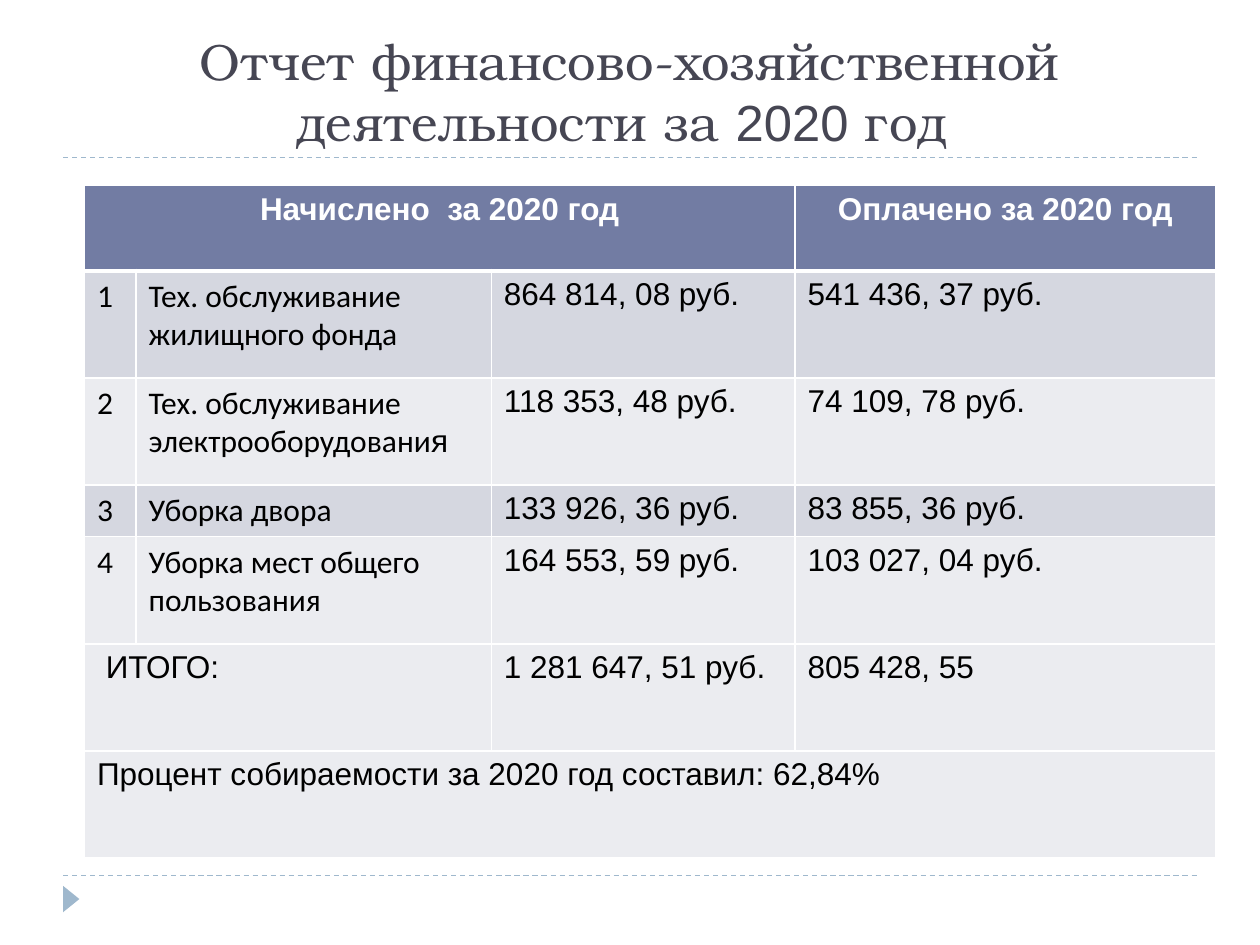
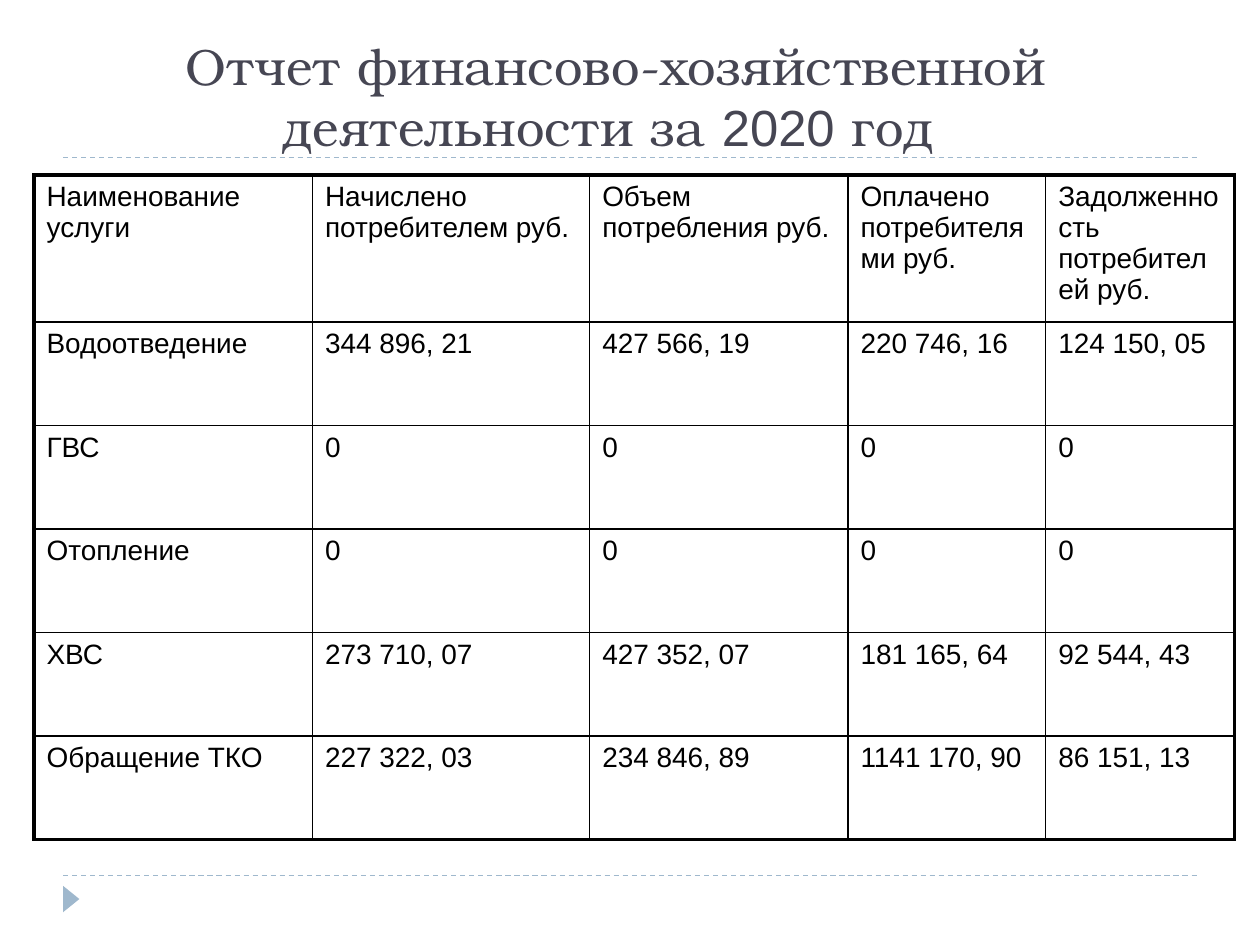
from collections import namedtuple
from dataclasses import dataclass

from lxml import etree
from pptx import Presentation
from pptx.dml.color import RGBColor
from pptx.enum.dml import MSO_LINE
from pptx.enum.shapes import MSO_CONNECTOR, MSO_SHAPE
from pptx.enum.text import MSO_ANCHOR, PP_ALIGN
from pptx.oxml.ns import qn
from pptx.util import Inches, Pt

STRAIGHT = MSO_CONNECTOR.STRAIGHT
TRIANGLE = MSO_SHAPE.ISOSCELES_TRIANGLE
DASH = MSO_LINE.DASH
BOTTOM = MSO_ANCHOR.BOTTOM
CENTER = PP_ALIGN.CENTER
LEFT = PP_ALIGN.LEFT

SLIDE_WIDTH = Inches(10)
SLIDE_HEIGHT = Inches(7.5)

Box = namedtuple("Box", "left top width height")
Style = namedtuple("Style", "font size color bold align before", defaults=(False, LEFT, 0))


@dataclass(frozen=True)
class Theme:
    accent: str = "9FB8CD"
    title: str = "464653"
    header: str = "727CA3"
    band_dark: str = "D5D7E0"
    band_light: str = "EBECF0"
    white: str = "FFFFFF"
    black: str = "000000"
    serif: str = "TeX Gyre Bonum"
    sans: str = "Arial"
    label: str = "Calibri"
    title_size: float = 29
    report_size: float = 18
    services_size: float = 16
    rule_width: float = 0.75
    thin: float = 1
    outer: float = 2.25
    header_rule: float = 3


THEME = Theme()

TITLE_RUNS = [
    ("Отчет финансово-хозяйственной деятельности за ", THEME.serif),
    ("2020", THEME.sans),
    (" год ", THEME.serif),
]

CHARGES = [
    ["Тех. обслуживание жилищного фонда", "864 814, 08 руб.", "541 436, 37 руб."],
    [[("Тех. обслуживание электрооборудовани", THEME.label), ("я", THEME.sans)],
     "118 353, 48 руб.", "74 109, 78 руб."],
    ["Уборка двора", "133 926, 36 руб.", "83 855, 36 руб."],
    ["Уборка мест общего пользования", "164 553, 59 руб.", "103 027, 04 руб."],
]

SERVICES = [
    ["Наименование услуги", "Начислено потребителем руб.", "Объем потребления руб.",
     "Оплачено потребителями руб.", "Задолженность потребителей руб."],
    ["Водоотведение", "344 896, 21", "427 566, 19", "220 746, 16", "124 150, 05"],
    ["ГВС", "0", "0", "0", "0"],
    ["Отопление", "0", "0", "0", "0"],
    ["ХВС", "273 710, 07", "427 352, 07", "181 165, 64", "92 544, 43"],
    ["Обращение ТКО", "227 322, 03", "234 846, 89", "1141 170, 90", "86 151, 13"],
]


def percent_box(left, top, width, height):
    return Box(int(SLIDE_WIDTH * left / 100), int(SLIDE_HEIGHT * top / 100),
               int(SLIDE_WIDTH * width / 100), int(SLIDE_HEIGHT * height / 100))


def color(value):
    return RGBColor.from_string(value)


def write(paragraph, content, style):
    runs = [(content, style.font)] if isinstance(content, str) else content
    paragraph.alignment = style.align
    paragraph.space_before = Pt(style.before)
    for text, font in runs:
        run = paragraph.add_run()
        run.text = text
        run.font.name = font
        run.font.size = Pt(style.size)
        run.font.bold = style.bold
        run.font.color.rgb = color(style.color)


def draw_rule(slide, box):
    rule = slide.shapes.add_connector(STRAIGHT, box.left, box.top,
                                      box.left + box.width, box.top)
    rule.line.color.rgb = color(THEME.accent)
    rule.line.width = Pt(THEME.rule_width)
    rule.line.dash_style = DASH
    etree.SubElement(rule._element.spPr, qn("a:effectLst"))


def draw_frame(slide):
    for top in (92.67, 16.67):
        draw_rule(slide, percent_box(5, top, 90, 0))
    marker = slide.shapes.add_shape(TRIANGLE, *percent_box(4.6, 94.27, 2.1, 1.73))
    marker.rotation = 90
    marker.shadow.inherit = False
    marker.fill.solid()
    marker.fill.fore_color.rgb = color(THEME.accent)
    marker.line.fill.background()


def draw_title(slide, box):
    frame = slide.shapes.add_textbox(*box).text_frame
    frame.word_wrap = True
    frame.vertical_anchor = BOTTOM
    write(frame.paragraphs[0], TITLE_RUNS,
          Style(THEME.serif, THEME.title_size, THEME.title, align=CENTER))


def draw_grid(slide, box, columns, rows):
    table = slide.shapes.add_table(len(rows), len(columns), *box).table
    for column, share in zip(table.columns, columns):
        column.width = int(box.width * share / sum(columns))
    for row, share in zip(table.rows, rows):
        row.height = int(box.height * share / sum(rows))
    return table


def set_borders(cell, line_color, left, right, top, bottom):
    properties = cell._tc.get_or_add_tcPr()
    for side, width in zip("LRTB", (left, right, top, bottom)):
        line = etree.SubElement(properties, qn(f"a:ln{side}"), w=str(Pt(width)))
        fill = etree.SubElement(line, qn("a:solidFill"))
        etree.SubElement(fill, qn("a:srgbClr"), val=line_color)


def draw_charges(slide, box):
    table = draw_grid(slide, box, (0.41, 2.82, 2.41, 3.34),
                      (0.68, 0.85, 0.85, 0.41, 0.85, 0.85, 0.85))
    total_row = len(CHARGES) + 1
    fills = [THEME.header] + [THEME.band_dark, THEME.band_light] * 2 + [THEME.band_light] * 2
    for row, fill in enumerate(fills):
        top = THEME.header_rule if row == 1 else THEME.thin
        bottom = THEME.header_rule if row == 0 else THEME.thin
        for cell in table.rows[row].cells:
            set_borders(cell, THEME.white, THEME.thin, THEME.thin, top, bottom)
            cell.fill.solid()
            cell.fill.fore_color.rgb = color(fill)

    for row, first, last in ((0, 0, 2), (total_row, 0, 1), (total_row + 1, 0, 3)):
        table.cell(row, first).merge(table.cell(row, last))

    heading = Style(THEME.sans, THEME.report_size, THEME.white, True, CENTER)
    amount = Style(THEME.sans, THEME.report_size, THEME.black)
    label = amount._replace(font=THEME.label)
    entries = [
        (0, 0, "Начислено  за 2020 год", heading),
        (0, 3, "Оплачено за 2020 год", heading),
        (total_row, 0, " ИТОГО:", amount),
        (total_row, 2, "1 281 647, 51 руб.", amount),
        (total_row, 3, "805 428, 55", amount),
        (total_row + 1, 0, "Процент собираемости за 2020 год составил: 62,84%", amount),
    ]
    for number, charge in enumerate(CHARGES, 1):
        for column, content in enumerate([str(number)] + charge):
            entries.append((number, column, content, label if column < 2 else amount))
    for row, column, content, style in entries:
        write(table.cell(row, column).text_frame.paragraphs[0], content, style)


def draw_services(slide, box):
    table = draw_grid(slide, box, (2.21, 2.2, 2.05, 1.57, 1.5),
                      [1.09] + [0.82] * (len(SERVICES) - 1))
    style = Style(THEME.sans, THEME.services_size, THEME.black, before=6)
    last_row, last_column = len(SERVICES) - 1, len(SERVICES[0]) - 1
    for row, service in enumerate(SERVICES):
        for column, content in enumerate(service):
            cell = table.cell(row, column)
            on_edge = (column == 0, column == last_column, row == 0, row == last_row)
            set_borders(cell, THEME.black,
                        *(THEME.outer if edge else THEME.thin for edge in on_edge))
            cell.fill.background()
            write(cell.text_frame.paragraphs[0], content, style)


def main():
    deck = Presentation()
    deck.slide_width, deck.slide_height = SLIDE_WIDTH, SLIDE_HEIGHT
    pages = [
        (percent_box(5, 3.33, 90, 13.33), draw_charges, percent_box(6.7, 19.6, 89.8, 71.2)),
        (percent_box(2.7, 1.73, 92.4, 15.47), draw_services, percent_box(2.7, 18.53, 95.3, 69.33)),
    ]
    for title_box, draw_table, table_box in pages:
        slide = deck.slides.add_slide(deck.slide_layouts[6])
        draw_frame(slide)
        draw_title(slide, title_box)
        draw_table(slide, table_box)
    deck.save("out.pptx")


if __name__ == "__main__":
    main()
